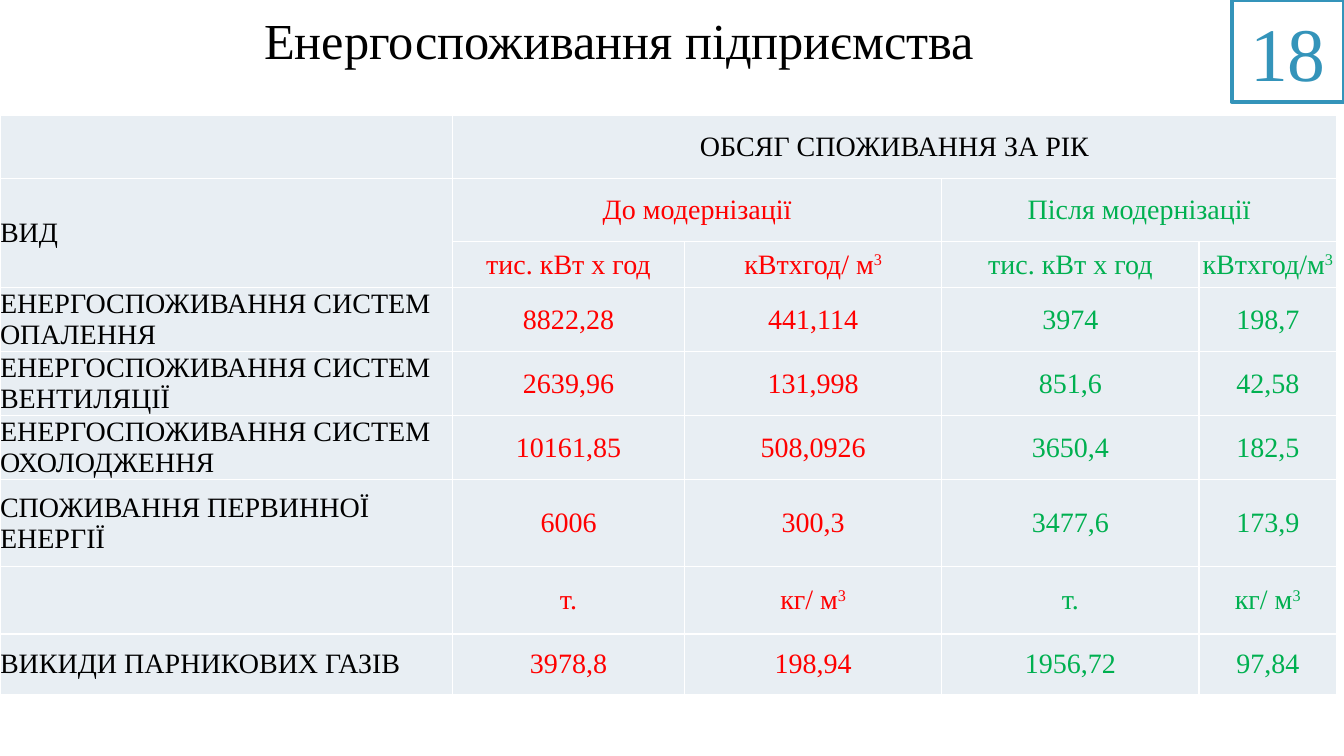
from lxml.etree import SubElement
from pptx import Presentation
from pptx.dml.color import RGBColor
from pptx.enum.shapes import MSO_SHAPE
from pptx.enum.text import MSO_ANCHOR, PP_ALIGN
from pptx.oxml.ns import qn
from pptx.util import Pt

PX = 9525  # EMU in one px, 96 px to the inch
FONT = "Times New Roman"
BLACK = RGBColor(0x00, 0x00, 0x00)
WHITE = RGBColor(0xFF, 0xFF, 0xFF)
RED = RGBColor(0xFF, 0x00, 0x00)
GREEN = RGBColor(0x00, 0xB0, 0x50)
BLUE = RGBColor(0x34, 0x94, 0xBA)
CELL_FILL = RGBColor(0xE8, 0xEE, 0xF3)

COLUMN_WIDTHS = [431, 221, 245, 245, 131]
ROW_HEIGHTS = [60, 60, 44, 61, 61, 61, 83, 64, 58]
COLUMN_COLORS = [BLACK, RED, RED, GREEN, GREEN]
# First and last cell of each merged block, as (row, column)
MERGES = [((0, 1), (0, 4)), ((1, 0), (2, 0)), ((1, 1), (1, 2)), ((1, 3), (1, 4))]
# "^" starts a superscript
ROWS = [
    ["", "ОБСЯГ СПОЖИВАННЯ ЗА РІК", "", "", ""],
    ["ВИД", "До модернізації", "", "Після модернізації", ""],
    ["", "тис. кВт х год", "кВтхгод/ м^3", "тис. кВт х год", "кВтхгод/м^3"],
    ["ЕНЕРГОСПОЖИВАННЯ СИСТЕМ ОПАЛЕННЯ", "8822,28", "441,114", "3974", "198,7"],
    ["ЕНЕРГОСПОЖИВАННЯ СИСТЕМ ВЕНТИЛЯЦІЇ", "2639,96", "131,998", "851,6", "42,58"],
    ["ЕНЕРГОСПОЖИВАННЯ СИСТЕМ ОХОЛОДЖЕННЯ", "10161,85", "508,0926", "3650,4", "182,5"],
    ["СПОЖИВАННЯ ПЕРВИННОЇ ЕНЕРГІЇ", "6006", "300,3", "3477,6", "173,9"],
    ["", "т.", "кг/ м^3", "т.", "кг/ м^3"],
    ["ВИКИДИ ПАРНИКОВИХ ГАЗІВ", "3978,8", "198,94", "1956,72", "97,84"],
]


def set_values(target, values):
    for name, value in values.items():
        setattr(target, name, value)


def write(paragraph, text, size, color, alignment=PP_ALIGN.CENTER):
    paragraph.alignment = alignment
    for index, part in enumerate(text.split("^")):
        run = paragraph.add_run()
        run.text = part
        set_values(run.font, {"name": FONT, "size": Pt(size), "bold": False})
        run.font.color.rgb = color
        if index:
            run.font._element.set("baseline", "30000")


def add_title(slide, left, top, width, height):
    title = slide.shapes.title
    set_values(title, {"left": left * PX, "top": top * PX,
                       "width": width * PX, "height": height * PX})
    set_values(title.text_frame, {"word_wrap": True, "vertical_anchor": MSO_ANCHOR.TOP})
    paragraph = title.text_frame.paragraphs[0]
    set_values(paragraph, {"line_spacing": 1.07, "space_before": Pt(0), "space_after": Pt(8)})
    write(paragraph, "Енергоспоживання підприємства", 36, BLACK)


def add_page_number(slide, left, top, width, height):
    box = slide.shapes.add_shape(MSO_SHAPE.RECTANGLE, left * PX, top * PX, width * PX, height * PX)
    box.shadow.inherit = False
    box.fill.background()
    box.line.color.rgb = BLUE
    box.line.width = Pt(3)
    set_values(box.text_frame, {"word_wrap": False, "vertical_anchor": MSO_ANCHOR.MIDDLE})
    write(box.text_frame.paragraphs[0], "18", 54, BLUE)


def add_borders(cell):
    properties = cell._tc.get_or_add_tcPr()
    for side in ("a:lnL", "a:lnR", "a:lnT", "a:lnB"):
        line = SubElement(properties, qn(side), w=str(Pt(1)))
        fill = SubElement(line, qn("a:solidFill"))
        SubElement(fill, qn("a:srgbClr"), val=str(WHITE))


def add_energy_table(slide, left, top):
    frame = slide.shapes.add_table(len(ROWS), len(COLUMN_WIDTHS), left * PX, top * PX,
                                   sum(COLUMN_WIDTHS) * PX, sum(ROW_HEIGHTS) * PX)
    table = frame.table
    set_values(table, {"first_row": False, "horz_banding": False})
    for column, width in zip(table.columns, COLUMN_WIDTHS):
        column.width = width * PX
    for row, height in zip(table.rows, ROW_HEIGHTS):
        row.height = height * PX

    for row_index, texts in enumerate(ROWS):
        for column_index, text in enumerate(texts):
            cell = table.cell(row_index, column_index)
            add_borders(cell)
            cell.fill.solid()
            cell.fill.fore_color.rgb = CELL_FILL
            set_values(cell, {"margin_left": 0, "margin_right": 0, "margin_top": 0,
                              "margin_bottom": 0, "vertical_anchor": MSO_ANCHOR.MIDDLE})
            if text:
                color = COLUMN_COLORS[column_index] if row_index else BLACK
                alignment = PP_ALIGN.CENTER if column_index else PP_ALIGN.LEFT
                write(cell.text_frame.paragraphs[0], text, 20, color, alignment)

    for first, last in MERGES:
        table.cell(*first).merge(table.cell(*last))


def main():
    presentation = Presentation()
    set_values(presentation, {"slide_width": 1280 * PX, "slide_height": 720 * PX})
    slide = presentation.slides.add_slide(presentation.slide_layouts[5])
    add_page_number(slide, 1173, 0, 107, 97)
    add_title(slide, 77, 0, 1026, 68)
    add_energy_table(slide, 0, 110)
    presentation.save("out.pptx")


if __name__ == "__main__":
    main()
